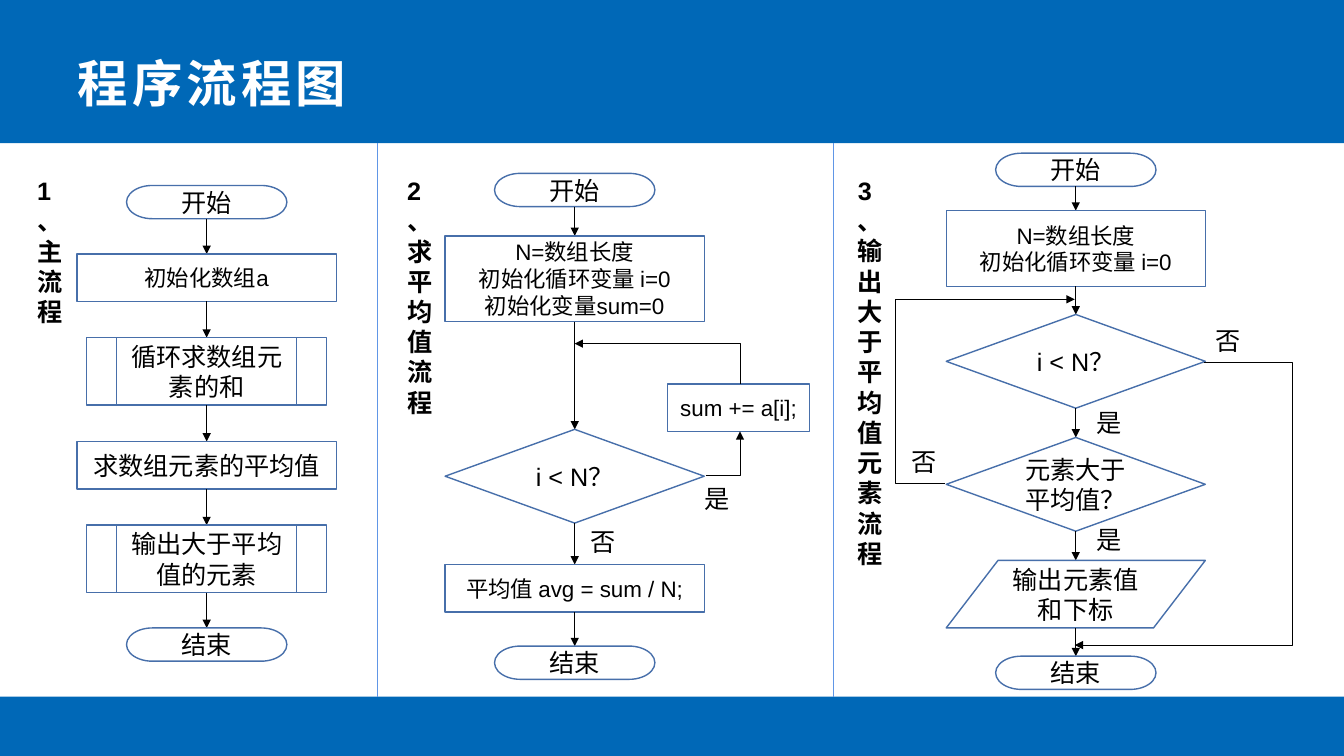
from dataclasses import dataclass

from lxml import etree
from pptx import Presentation
from pptx import util as u
from pptx.dml.color import RGBColor
from pptx.enum import shapes, text
from pptx.oxml.ns import qn


@dataclass(frozen=True)
class Theme:
    font: str = "Arial"
    band: str = "0068B7"
    outline: str = "476FAA"
    divider: str = "6096E6"
    ink: str = "000000"
    white: str = "FFFFFF"
    title: int = 36
    body: int = 18
    small: int = 16


theme = Theme()
WIDTH, HEIGHT = 13.33, 7.5
HEADER, FOOTER = 1.42, 0.59
DIVIDERS = (3.74, 8.27)
TITLE = "程序流程图"

# kind: preset shape, width, height
KINDS = {
    "terminator": (shapes.MSO_SHAPE.FLOWCHART_TERMINATOR, 1.59, 0.33),
    "process": (shapes.MSO_SHAPE.FLOWCHART_PROCESS, 2.57, 0.47),
    "routine": (shapes.MSO_SHAPE.FLOWCHART_PREDEFINED_PROCESS, 2.38, 0.67),
    "decision": (shapes.MSO_SHAPE.FLOWCHART_DECISION, 2.57, 0.93),
    "output": (shapes.MSO_SHAPE.FLOWCHART_DATA, 2.57, 0.67),
}

# step: kind, text, gap above, type size, own height (None: height of its kind)
FLOWS = [
    {"heading": "1、\n主流程", "heading_box": (0.27, 1.31), "center": 2.05, "top": 1.84,
     "steps": [
         ("terminator", "开始", 0, theme.body, None),
         ("process", "初始化数组a", 0.35, theme.small, None),
         ("routine", "循环求数组元素的和", 0.36, theme.body, None),
         ("process", "求数组元素的平均值", 0.36, theme.body, None),
         ("routine", "输出大于平均值的元素", 0.36, theme.body, None),
         ("terminator", "结束", 0.35, theme.body, None)]},
    {"heading": "2、求平均值流程", "heading_box": (3.94, 2.22), "center": 5.7, "top": 1.72,
     "steps": [
         ("terminator", "开始", 0, theme.body, None),
         ("process", "N=数组长度\n初始化循环变量 i=0\n初始化变量sum=0", 0.29, theme.small, 0.85),
         ("decision", "i < N？", 1.07, theme.body, None),
         ("process", "平均值 avg = sum / N;", 0.41, theme.small, None),
         ("terminator", "结束", 0.34, theme.body, None)]},
    {"heading": "3、输出大于平均值元素流程", "heading_box": (8.41, 3.73), "center": 10.67, "top": 1.52,
     "steps": [
         ("terminator", "开始", 0, theme.body, None),
         ("process", "N=数组长度\n初始化循环变量 i=0", 0.24, theme.small, 0.75),
         ("decision", "i < N？", 0.28, theme.body, None),
         ("decision", "元素大于平均值？", 0.29, theme.body, None),
         ("output", "输出元素值和下标", 0.29, theme.body, None),
         ("terminator", "结束", 0.28, theme.body, None)]},
]
LOOP_BODY = ("sum += a[i];", 6.62, 3.81, 1.41, 0.47)
BRANCH_LABELS = [
    ("是", 6.89, 4.75), ("否", 5.76, 5.17),
    ("是", 10.78, 3.99), ("是", 10.78, 5.15), ("否", 11.96, 3.18), ("否", 8.94, 4.38),
]
# bent arrow: start, x of its upright part, end
BRANCHES = [
    ((7, 4.72), 7.34, (7.34, 4.28)),
    ((7.34, 3.81), 7.34, (5.7, 3.41)),
    ((9.37, 4.8), 8.88, (10.66, 2.97)),
    ((11.94, 3.59), 12.82, (10.66, 6.4)),
]


def inches(*lengths):
    return [u.Inches(length) for length in lengths]


def write(frame, words, size, color=theme.ink, bold=False, align=None):
    frame.text = words
    for paragraph in frame.paragraphs:
        paragraph.alignment = align
        for run in paragraph.runs:
            run.font.name = theme.font
            run.font.size = u.Pt(size)
            run.font.bold = bold
            run.font.color.rgb = RGBColor.from_string(color)


def add_band(slide, top, height):
    band = slide.shapes.add_shape(shapes.MSO_SHAPE.RECTANGLE, *inches(0, top, WIDTH, height))
    band.shadow.inherit = False
    band.fill.solid()
    band.fill.fore_color.rgb = RGBColor.from_string(theme.band)
    band.line.fill.background()
    slide.shapes._spTree.insert(2, band._element)  # behind the title


def add_step(slide, preset, words, size, *box):
    step = slide.shapes.add_shape(preset, *inches(*box))
    step.shadow.inherit = False
    step.fill.background()
    step.line.color.rgb = RGBColor.from_string(theme.outline)
    step.line.width = u.Pt(1)
    step.text_frame.vertical_anchor = text.MSO_ANCHOR.MIDDLE
    write(step.text_frame, words, size, align=text.PP_ALIGN.CENTER)


def add_label(slide, words, left, top, width, height, wrap=False, bold=False):
    label = slide.shapes.add_textbox(*inches(left, top, width, height))
    label.text_frame.word_wrap = wrap
    write(label.text_frame, words, theme.body, bold=bold)


def add_line(slide, start, end, color=theme.ink, arrow=True, upright=None):
    """Draw a straight line, or a bent one when upright gives the x of its vertical part."""
    kind = shapes.MSO_CONNECTOR.STRAIGHT if upright is None else shapes.MSO_CONNECTOR.ELBOW
    line = slide.shapes.add_connector(kind, *inches(*start, *end))
    line.line.color.rgb = RGBColor.from_string(color)
    line.line.width = u.Pt(0.5)
    properties = line._element.spPr
    if arrow:
        etree.SubElement(properties.find(qn("a:ln")), qn("a:tailEnd"), type="triangle")
    etree.SubElement(properties, qn("a:effectLst"))
    if upright is None:
        return
    geometry = properties.find(qn("a:prstGeom"))
    if upright == end[0]:
        geometry.set("prst", "bentConnector2")
    else:
        share = (upright - start[0]) / (end[0] - start[0])
        adjustments = geometry.get_or_add_avLst()
        etree.SubElement(adjustments, qn("a:gd"), name="adj1", fmla=f"val {round(share * 100000)}")


def add_flow(slide, flow):
    center, bottom = flow["center"], flow["top"]
    for kind, words, gap, size, own_height in flow["steps"]:
        preset, width, height = KINDS[kind]
        height = own_height or height
        top = bottom + gap
        if gap:
            add_line(slide, (center, bottom), (center, top))
        add_step(slide, preset, words, size, center - width / 2, top, width, height)
        bottom = top + height
    left, height = flow["heading_box"]
    add_label(slide, flow["heading"], left, 1.69, 0.39, height, wrap=True, bold=True)


def main():
    presentation = Presentation()
    presentation.slide_width, presentation.slide_height = inches(WIDTH, HEIGHT)
    slide = presentation.slides.add_slide(presentation.slide_layouts[5])

    add_band(slide, 0, HEADER)
    add_band(slide, HEIGHT - FOOTER, FOOTER)
    title = slide.shapes.title
    title.left, title.top, title.width, title.height = inches(0.67, 0.43, 12, 0.77)
    title.text_frame.vertical_anchor = text.MSO_ANCHOR.MIDDLE
    write(title.text_frame, TITLE, theme.title, theme.white, True, text.PP_ALIGN.LEFT)
    title.text_frame.paragraphs[0].runs[0].font._element.set("spc", "300")

    for flow in FLOWS:
        add_flow(slide, flow)
    words, *box = LOOP_BODY
    add_step(slide, KINDS["process"][0], words, theme.small, *box)
    for start, upright, end in BRANCHES:
        add_line(slide, start, end, upright=upright)
    for words, left, top in BRANCH_LABELS:
        add_label(slide, words, left, top, 0.45, 0.4)
    for x in DIVIDERS:
        add_line(slide, (x, HEADER), (x, HEIGHT - FOOTER), theme.divider, arrow=False)

    presentation.save("out.pptx")


if __name__ == "__main__":
    main()
